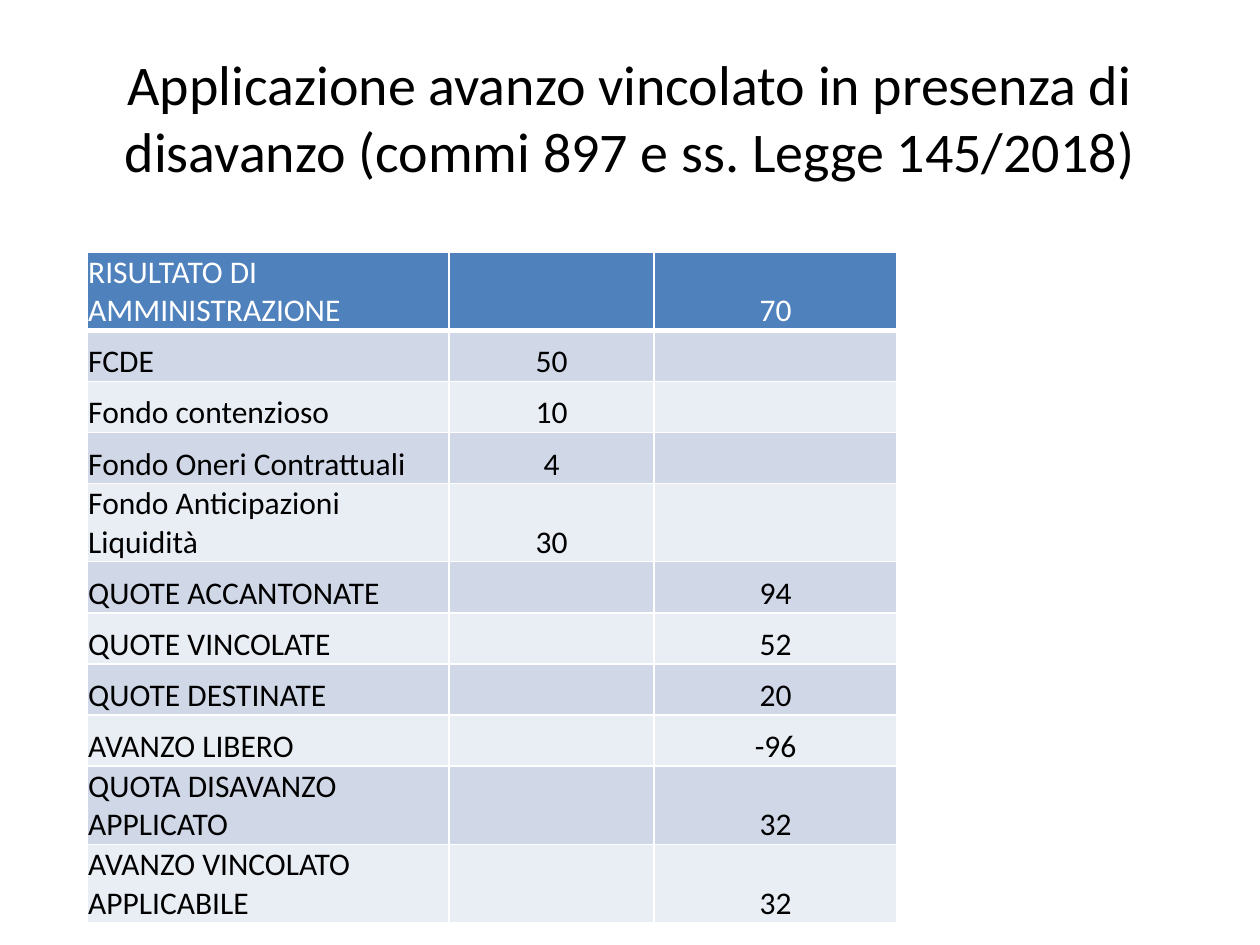
"""Build a slide with a table on applying the restricted surplus under a deficit."""
import pptx
import pptx.util
import pptx.dml.color
import pptx.enum.text
import lxml.etree
import pptx.oxml.ns

Pt = pptx.util.Pt
RGBColor = pptx.dml.color.RGBColor
PP_ALIGN = pptx.enum.text.PP_ALIGN
MSO_ANCHOR = pptx.enum.text.MSO_ANCHOR
qn = pptx.oxml.ns.qn

WHITE = RGBColor(0xFF, 0xFF, 0xFF)
BLACK = RGBColor(0x00, 0x00, 0x00)
HEADER = RGBColor(0x4F, 0x81, 0xBD)
BANDS = (RGBColor(0xE9, 0xED, 0xF4), RGBColor(0xD0, 0xD8, 0xE8))
FONT = "Calibri"

TITLE = "Applicazione avanzo vincolato in presenza di disavanzo (commi 897 e ss. Legge 145/2018)"
ROWS = (
    ("RISULTATO DI AMMINISTRAZIONE", "", "70"),
    ("FCDE", "50", ""),
    ("Fondo contenzioso", "10", ""),
    ("Fondo Oneri Contrattuali", "4", ""),
    ("Fondo Anticipazioni Liquidità", "30", ""),
    ("QUOTE ACCANTONATE", "", "94"),
    ("QUOTE VINCOLATE", "", "52"),
    ("QUOTE DESTINATE", "", "20"),
    ("AVANZO LIBERO", "", "-96"),
    ("QUOTA DISAVANZO APPLICATO", "", "32"),
    ("AVANZO VINCOLATO APPLICABILE", "", "32"),
)
COLUMN_WIDTHS = (207, 117, 139)
ROW_HEIGHT = 29.2


def format_paragraph(p, size, color, align):
    p.alignment = align
    p.font.name = FONT
    p.font.size = Pt(size)
    p.font.color.rgb = color


def add_title(s, text):
    sp = s.shapes.title
    sp.left, sp.top, sp.width, sp.height = Pt(36), Pt(21.6), Pt(648), Pt(90)
    tf = sp.text_frame
    tf.text = text
    tf.word_wrap = True
    tf.vertical_anchor = MSO_ANCHOR.MIDDLE
    format_paragraph(tf.paragraphs[0], 32, BLACK, PP_ALIGN.CENTER)


def set_borders(cell, top, bottom):
    tc_pr = cell._tc.get_or_add_tcPr()
    for side, width in (("L", 1), ("R", 1), ("T", top), ("B", bottom)):
        ln = lxml.etree.SubElement(tc_pr, qn("a:ln" + side), w=str(Pt(width)))
        fill = lxml.etree.SubElement(ln, qn("a:solidFill"))
        lxml.etree.SubElement(fill, qn("a:srgbClr"), val=str(WHITE))


def format_cell(cell, text, row, column):
    set_borders(cell, 3 if row == 1 else 1, 3 if row == 0 else 1)
    cell.fill.solid()
    cell.fill.fore_color.rgb = BANDS[row % 2] if row else HEADER
    cell.vertical_anchor = MSO_ANCHOR.BOTTOM
    cell.margin_left = cell.margin_right = cell.margin_top = Pt(0.75)
    cell.margin_bottom = Pt(0)
    cell.text = text
    format_paragraph(cell.text_frame.paragraphs[0], 18, BLACK if row else WHITE,
                     PP_ALIGN.CENTER if column else PP_ALIGN.LEFT)
    cell.text_frame.paragraphs[0].font.bold = False


def add_result_table(s, rows):
    table = s.shapes.add_table(len(rows), len(COLUMN_WIDTHS), Pt(49.7), Pt(144),
                               Pt(sum(COLUMN_WIDTHS)), Pt(ROW_HEIGHT * len(rows))).table
    for column, width in zip(table.columns, COLUMN_WIDTHS):
        column.width = Pt(width)
    for i, texts in enumerate(rows):
        table.rows[i].height = Pt(ROW_HEIGHT)
        for j, text in enumerate(texts):
            format_cell(table.cell(i, j), text, i, j)


def main():
    prs = pptx.Presentation()
    prs.slide_width, prs.slide_height = Pt(720), Pt(540)
    s = prs.slides.add_slide(prs.slide_layouts[5])
    add_title(s, TITLE)
    add_result_table(s, ROWS)
    prs.save("out.pptx")


if __name__ == "__main__":
    main()
